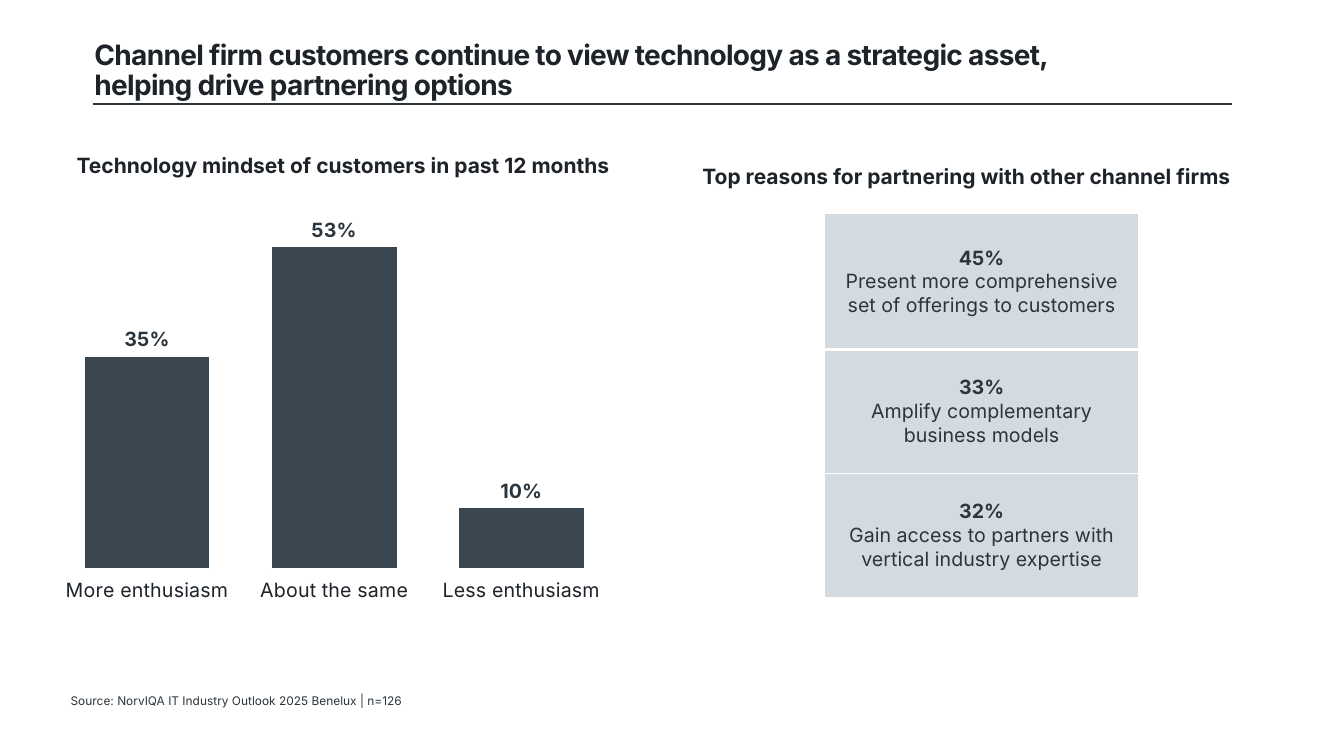
from lxml import etree
from pptx import Presentation
from pptx import util as u
from pptx.chart import data
from pptx.dml import color
from pptx.enum import chart as ch, shapes, text
from pptx.oxml import parse_xml
from pptx.oxml.ns import nsdecls, qn

INK, SLATE, BAR, PALE, WHITE = "1D2328", "2C353C", "3A4650", "D3DBE0", "FFFFFF"


def rgb(value):
    return color.RGBColor.from_string(value)


def style(font, size, shade, bold=False):
    for name, value in {"name": "Inter", "size": u.Pt(size), "bold": bold}.items():
        setattr(font, name, value)
    font.color.rgb = rgb(shade)


deck = Presentation()
deck.slide_width, deck.slide_height = u.Cm(33.87), u.Cm(19.05)
page = deck.slides.add_slide(deck.slide_layouts[6])

LEFT, CENTER = text.PP_ALIGN.LEFT, text.PP_ALIGN.CENTER
TOP, MIDDLE = text.MSO_ANCHOR.TOP, text.MSO_ANCHOR.MIDDLE
captions = [
    ("Channel firm customers continue to view technology as a strategic asset, helping drive partnering options",
     (2.13, 0.91, 25.81, 1.78), 20, INK, True, LEFT, MIDDLE),
    ("Source: NorvIQA IT Industry Outlook 2025 Benelux | n=126",
     (1.78, 17.4, 17.78, 0.51), 8.5, SLATE, False, LEFT, MIDDLE),
    ("Technology mindset of customers in past 12 months",
     (1.35, 3.71, 14.6, 0.89), 15, INK, True, CENTER, TOP),
    ("Top reasons for partnering with other channel firms",
     (17.12, 3.99, 14.48, 0.89), 15, INK, True, CENTER, TOP),
]
boxes = []
for words, place, size, shade, bold, align, anchor in captions:
    box = page.shapes.add_textbox(*map(u.Cm, place))
    frame = box.text_frame
    frame.word_wrap, frame.vertical_anchor = True, anchor
    para = frame.paragraphs[0]
    para.alignment = align
    span = para.add_run()
    span.text = words
    style(span.font, size, shade, bold)
    boxes.append(box)

title, source = boxes[:2]
title_para = title.text_frame.paragraphs[0]
title_para.line_spacing = 0.9
title_para.runs[0].font._element.set("spc", "-50")
for side in ("left", "top", "right", "bottom"):
    setattr(source.text_frame, f"margin_{side}", 0)

rule = page.shapes.add_connector(
    shapes.MSO_CONNECTOR.STRAIGHT, u.Cm(2.34), u.Cm(2.62), u.Cm(31.06), u.Cm(2.62))
rule.line.color.rgb = rgb(SLATE)
rule.line.width = u.Pt(1)
etree.SubElement(rule._element.spPr, qn("a:effectLst"))

mindset = data.CategoryChartData(number_format="0%")
mindset.categories = ["More enthusiasm", "About the same", "Less enthusiasm"]
mindset.add_series("Series 1", (0.35, 0.53, 0.1))
chart = page.shapes.add_chart(
    ch.XL_CHART_TYPE.COLUMN_CLUSTERED,
    *map(u.Cm, (1.35, 5.11, 14.15, 11.53)), mindset).chart
chart.has_title = chart.has_legend = False
chart.font.name, chart.font.size = "Roboto", u.Pt(18)
chart.font.color.rgb = rgb("586169")

category_axis = chart.category_axis
category_axis.format.line.fill.background()
style(category_axis.tick_labels.font, 14, INK)
value_axis = chart.value_axis
for name, value in {"visible": False, "has_major_gridlines": False,
                    "minimum_scale": 0, "maximum_scale": 0.58}.items():
    setattr(value_axis, name, value)

plot = chart.plots[0]
plot.gap_width, plot.vary_by_categories = 49, False
bars = plot.series[0].format
bars.fill.solid()
bars.fill.fore_color.rgb = rgb(BAR)
bars.line.color.rgb = rgb(WHITE)
bars.line.width = u.Pt(0.75)
plot.has_data_labels = True
labels = plot.data_labels
for name, value in {"show_value": True, "number_format": "0%",
                    "number_format_is_linked": False,
                    "position": ch.XL_LABEL_POSITION.OUTSIDE_END}.items():
    setattr(labels, name, value)
style(labels.font, 14, SLATE, True)

plot_area = chart._chartSpace.chart.plotArea
for layout in plot_area.findall(qn("c:layout")):
    plot_area.remove(layout)
plot_area.insert(0, parse_xml(
    f'<c:layout {nsdecls("c")}><c:manualLayout><c:layoutTarget val="inner"/>'
    '<c:xMode val="edge"/><c:yMode val="edge"/><c:x val="0"/><c:y val="0.03"/>'
    '<c:w val="1"/><c:h val="0.77"/></c:manualLayout></c:layout>'))

reasons = [
    ("45%", "Present more comprehensive set of offerings to customers", 3.43),
    ("33%", "Amplify complementary business models", 3.12),
    ("32%", "Gain access to partners with vertical industry expertise", 3.12),
]
table = page.shapes.add_table(
    len(reasons), 1, *map(u.Cm, (20.78, 5.38, 7.92, 9.67))).table
table.first_row = table.horz_banding = False
for index, (share, reason, height) in enumerate(reasons):
    table.rows[index].height = u.Cm(height)
    cell = table.cell(index, 0)
    cell.vertical_anchor = MIDDLE
    cell.fill.solid()
    cell.fill.fore_color.rgb = rgb(PALE)
    frame = cell.text_frame
    for para, words, bold in ((frame.paragraphs[0], share, True),
                              (frame.add_paragraph(), reason, False)):
        para.alignment = CENTER
        span = para.add_run()
        span.text = words
        style(span.font, 14, SLATE, bold)
    for order, side in enumerate("LRTB"):
        thick = (index, side) in ((0, "B"), (1, "T"))
        cell._tc.tcPr.insert(order, parse_xml(
            f'<a:ln{side} {nsdecls("a")} w="{u.Pt(3 if thick else 1)}"><a:solidFill>'
            f'<a:srgbClr val="{WHITE}"/></a:solidFill></a:ln{side}>'))

deck.save("out.pptx")
